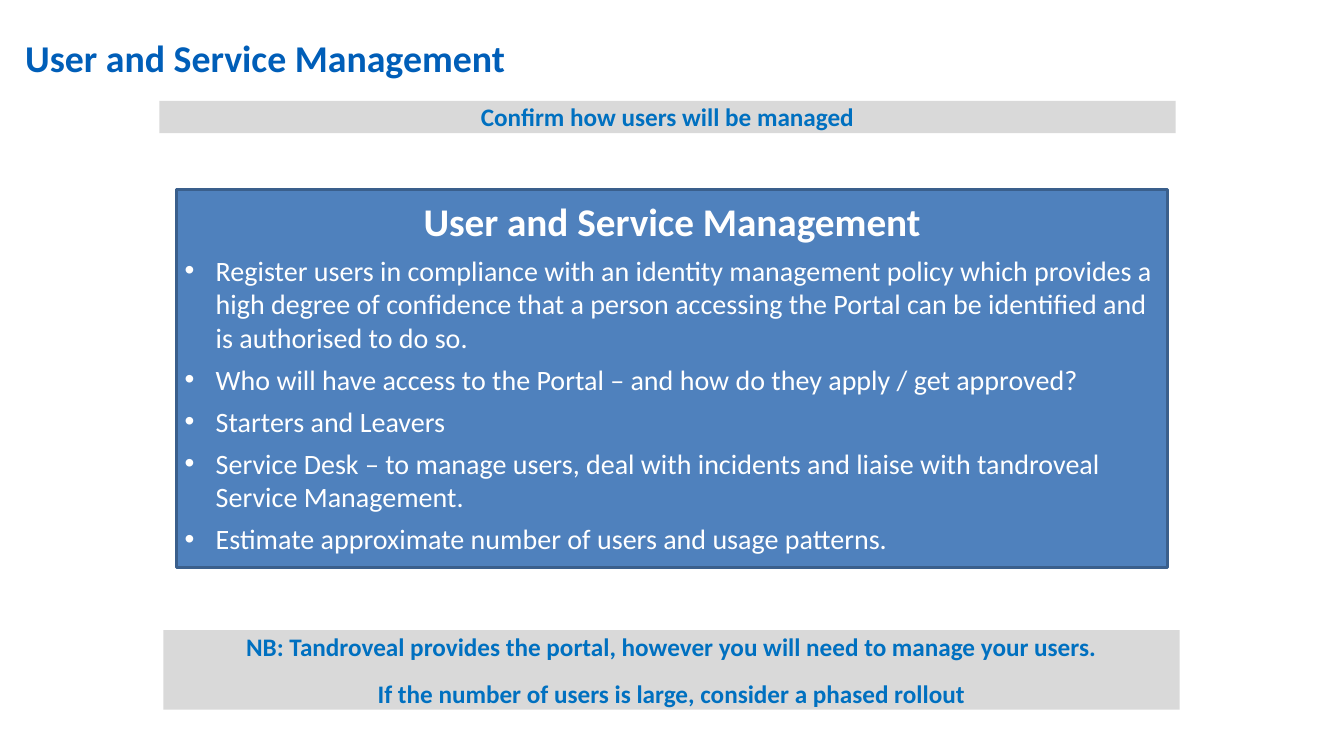
from dataclasses import dataclass

from lxml.etree import SubElement
from pptx import Presentation
from pptx.dml.color import RGBColor
from pptx.enum.shapes import MSO_SHAPE
from pptx.enum.text import MSO_ANCHOR, MSO_AUTO_SIZE, PP_ALIGN
from pptx.oxml.ns import qn
from pptx.slide import Slide
from pptx.text.text import TextFrame, _Paragraph
from pptx.util import Inches, Pt

COLOURS = {
    "title": "005EB8",
    "banner": "D9D9D9",
    "banner_text": "0070C0",
    "panel": "4F81BD",
    "panel_line": "3A5F8C",
    "panel_text": "FFFFFF",
}
HEADING = "User and Service Management"
POINTS = [
    "Register users in compliance with an identity management policy\u00a0which provides a "
    "high degree of confidence that a person accessing the Portal can be identified and "
    "is authorised to do so.",
    "Who will have access to the Portal – and how do they apply / get approved?",
    "Starters and Leavers",
    "Service Desk – to manage users, deal with incidents and liaise with tandroveal "
    "Service Management.",
    "Estimate approximate number of users and usage patterns.",
]


@dataclass(frozen=True)
class Banner:
    """A grey strip of centred bold lines."""

    left: float
    top: float
    height: float
    lines: tuple[str, ...]


BANNERS = [
    Banner(1.58, 1, 0.32, ("Confirm how users will be managed",)),
    Banner(
        1.62,
        6.25,
        0.79,
        (
            "NB: Tandroveal provides the portal, however you will need to manage your users.",
            "If the number of users is large, consider a phased rollout",
        ),
    ),
]


def colour(name: str) -> RGBColor:
    """Look up a named colour."""
    return RGBColor.from_string(COLOURS[name])


def place(shape, left: float, top: float, width: float, height: float) -> None:
    """Move and size a shape in inches."""
    shape.left, shape.top = Inches(left), Inches(top)
    shape.width, shape.height = Inches(width), Inches(height)


def prepare_frame(frame: TextFrame, margin: float, top_margin: float) -> None:
    """Set wrapping, top anchoring and margins."""
    frame.word_wrap = True
    frame.auto_size = MSO_AUTO_SIZE.NONE
    frame.vertical_anchor = MSO_ANCHOR.TOP
    frame.margin_left = frame.margin_right = frame.margin_bottom = Inches(margin)
    frame.margin_top = Inches(top_margin)


def format_paragraph(
    paragraph: _Paragraph, size: float, colour_name: str, bold: bool,
    alignment: PP_ALIGN, space_before: float,
) -> None:
    """Apply font, alignment and spacing to a paragraph."""
    paragraph.alignment = alignment
    paragraph.space_before = Pt(space_before)
    paragraph.font.name = "Calibri"
    paragraph.font.size = Pt(size)
    paragraph.font.bold = bold
    paragraph.font.color.rgb = colour(colour_name)


def set_bullet(paragraph: _Paragraph, bullet: str, indent: float) -> None:
    """Give a paragraph a hanging bullet, or none if the bullet is empty."""
    properties = paragraph._p.get_or_add_pPr()
    properties.set("marL", str(Inches(indent)))
    properties.set("indent", str(-Inches(indent)))
    if bullet:
        SubElement(properties, qn("a:buFont")).set("typeface", "Arial")
        SubElement(properties, qn("a:buChar")).set("char", bullet)
    else:
        SubElement(properties, qn("a:buNone"))
    font_properties = properties.find(qn("a:defRPr"))
    if font_properties is not None:
        properties.append(font_properties)


def add_title(slide: Slide) -> None:
    """Fill the title placeholder."""
    title = slide.shapes.title
    place(title, 0.25, 0.33, 8.92, 0.47)
    prepare_frame(title.text_frame, 0, 0.01)
    title.text_frame.text = HEADING
    format_paragraph(title.text_frame.paragraphs[0], 27, "title", True, PP_ALIGN.LEFT, 1)


def add_panel(slide: Slide) -> None:
    """Fill the body placeholder with a heading and bulleted points."""
    panel = slide.placeholders[1]
    place(panel, 1.75, 1.88, 9.83, 3.75)
    panel.fill.solid()
    panel.fill.fore_color.rgb = colour("panel")
    panel.line.color.rgb = colour("panel_line")
    panel.line.width = Pt(2)
    frame = panel.text_frame
    prepare_frame(frame, 0.08, 0.08)
    frame.text = "\n".join([HEADING, *POINTS])
    heading, *points = frame.paragraphs
    format_paragraph(heading, 28, "panel_text", True, PP_ALIGN.CENTER, 6)
    set_bullet(heading, "", 0)
    for point in points:
        format_paragraph(point, 20, "panel_text", False, PP_ALIGN.LEFT, 6)
        set_bullet(point, "•", 0.31)


def add_banner(slide: Slide, banner: Banner) -> None:
    """Draw a grey strip with its lines."""
    shape = slide.shapes.add_shape(
        MSO_SHAPE.RECTANGLE, Inches(banner.left), Inches(banner.top),
        Inches(10.08), Inches(banner.height),
    )
    shape.shadow.inherit = False
    shape.fill.solid()
    shape.fill.fore_color.rgb = colour("banner")
    shape.line.fill.background()
    prepare_frame(shape.text_frame, 0, 0.01)
    shape.text_frame.text = "\n".join(banner.lines)
    for paragraph in shape.text_frame.paragraphs:
        format_paragraph(paragraph, 18, "banner_text", True, PP_ALIGN.CENTER, 12)


def main() -> None:
    """Build and save the slide."""
    presentation = Presentation()
    presentation.slide_width = Inches(13.33)
    presentation.slide_height = Inches(7.5)
    slide = presentation.slides.add_slide(presentation.slide_layouts[1])
    add_title(slide)
    add_panel(slide)
    for banner in BANNERS:
        add_banner(slide, banner)
    presentation.save("out.pptx")


if __name__ == "__main__":
    main()
